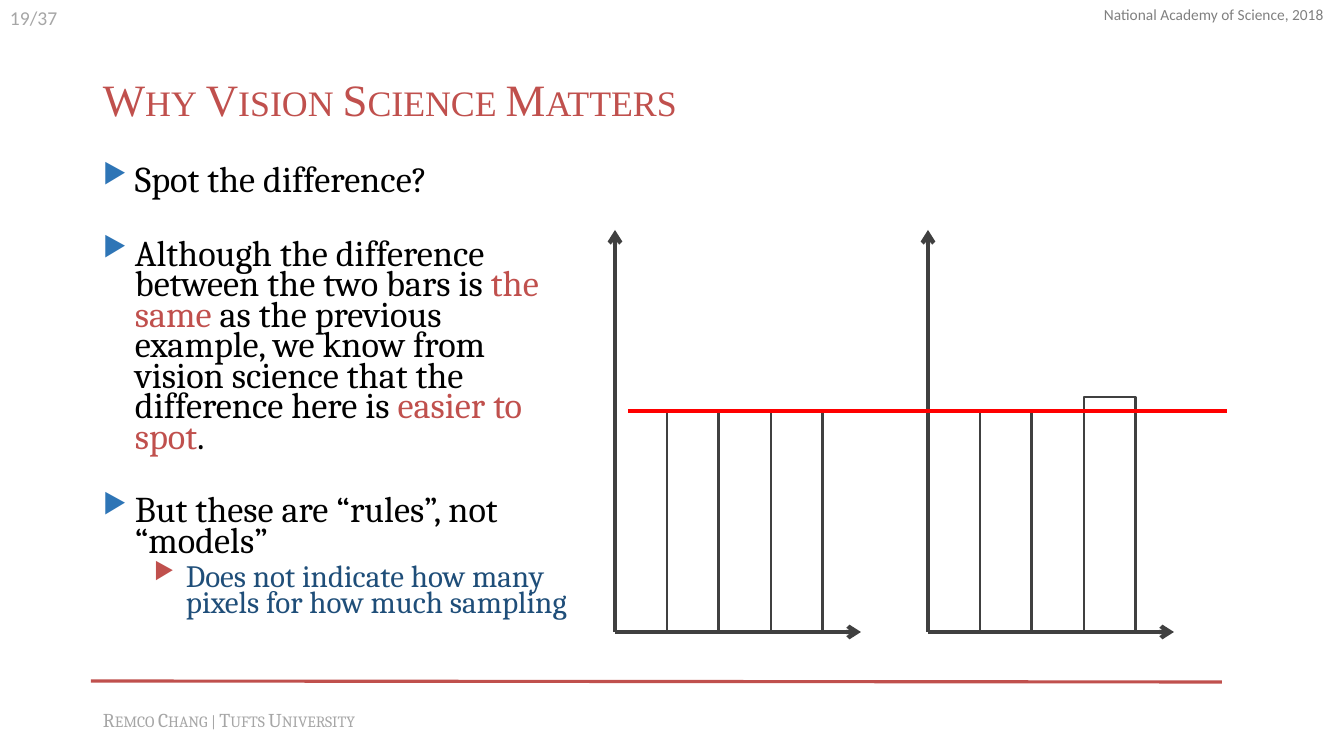
"""Build the slide on why vision science matters."""
from lxml.etree import SubElement as Sub
from pptx import Presentation
from pptx.dml.color import RGBColor as Rgb
from pptx.enum.shapes import MSO_CONNECTOR as Link, MSO_SHAPE as Kind
from pptx.enum.text import MSO_ANCHOR as Anchor
from pptx.oxml.ns import qn
from pptx.util import Pt

SCALE = 914400 / 100.8
HUES = {
    "red": "C0504D", "blue": "2E75B6", "navy": "1F4E79", "black": "000000",
    "pale": "A6A6A6", "gray": "808080", "ink": "404040", "mark": "FF0000",
}


def px(num):
    """Turn pixels into EMU."""
    return round(num * SCALE)


def hue(name):
    """Give the colour of a name."""
    return Rgb.from_string(HUES[name])


def write(para, text, size, font, color, small=False):
    """Add one run of text in its format."""
    run = para.add_run()
    run.text = text
    run.font.size = Pt(size)
    run.font.name = font
    run.font.color.rgb = hue(color)
    if small:
        run.font._element.set("cap", "small")


def bullet(para, color, left, hang):
    """Give a paragraph a hanging triangle bullet."""
    props = para._p.get_or_add_pPr()
    props.set("marL", str(px(left)))
    props.set("indent", str(-px(hang)))
    tint = Sub(props, qn("a:buClr"))
    Sub(tint, qn("a:srgbClr"), val=HUES[color])
    Sub(props, qn("a:buSzPct"), val="75000")
    Sub(props, qn("a:buChar"), char="▶")


class Page:
    """Hold the style and the current slide."""

    body, head, plain = "Cambria", "Times New Roman", "Calibri"

    def __init__(self, deck):
        """Add a blank slide."""
        self.slide = deck.slides.add_slide(deck.slide_layouts[6])

    def box(self, x, y, w, h):
        """Add an empty text frame that wraps."""
        frame = self.slide.shapes.add_textbox(px(x), px(y), px(w), px(h)).text_frame
        frame.word_wrap = True
        return frame

    def label(self, x, y, w, h, text, **form):
        """Add a single line of text."""
        frame = self.box(x, y, w, h)
        write(frame.paragraphs[0], text, **form)
        return frame

    def points(self, x, y, w, h, items):
        """Add a list of (level, space before, runs)."""
        frame = self.box(x, y, w, h)
        for num, (level, gap, runs) in enumerate(items):
            para = frame.add_paragraph() if num else frame.paragraphs[0]
            para.level = level
            para.line_spacing = 0.7
            para.space_before = Pt(gap)
            bullet(para, ("blue", "red")[level], (32, 83)[level], 32)
            for text, color in runs:
                write(para, text, size=(25.9, 22.2)[level], font=self.body, color=color)

    def line(self, x1, y1, x2, y2, color, width, arrow=False):
        """Add a straight line, with an arrowhead if asked."""
        link = self.slide.shapes.add_connector(
            Link.STRAIGHT, px(x1), px(y1), px(x2), px(y2))
        link.line.color.rgb = hue(color)
        link.line.width = Pt(width)
        if arrow:
            Sub(link.line._get_or_add_ln(), qn("a:tailEnd"), type="arrow")
        Sub(link._element.spPr, qn("a:effectLst"))

    def bar(self, x, y, w, h):
        """Add a hollow bar."""
        shape = self.slide.shapes.add_shape(Kind.RECTANGLE, px(x), px(y), px(w), px(h))
        shape.shadow.inherit = False
        shape.fill.background()
        shape.line.color.rgb = hue("ink")
        shape.line.width = Pt(2)

    def plot(self, x, base, highs):
        """Add two axes and evenly spaced bars."""
        self.line(x, base, x, base - 402, "ink", 3, arrow=True)
        self.line(x, base, x + 246, base, "ink", 3, arrow=True)
        for num, high in enumerate(highs):
            self.bar(x + 52 + 104 * num, base - high, 52, high)


def main():
    """Build and save the deck."""
    deck = Presentation()
    deck.slide_width, deck.slide_height = px(1344), px(756)
    page = Page(deck)
    page.line(91, 681, 1222, 682, "red", 2.25)
    page.label(93, 703, 354, 34, "Remco Chang | Tufts University",
               size=14, font=page.body, color="pale", small=True)
    page.label(0, 1, 280, 34, "19/37", size=14, font=page.plain, color="pale")
    page.label(1094, 0, 248, 29, "National Academy of Science, 2018",
               size=11, font=page.plain, color="gray")
    title = page.label(93, 56, 1131, 92, "Why Vision Science Matters",
                       size=32, font=page.head, color="red", small=True)
    title.vertical_anchor = Anchor.MIDDLE
    title.paragraphs[0].line_spacing = 0.9
    page.points(93, 163, 485, 510, [
        (0, 0, [("Spot the difference?", "black")]),
        (0, 31, [
            ("Although the difference between the two bars is ", "black"),
            ("the same ", "red"),
            ("as the previous example, we know from vision science "
             "that the difference here is ", "black"),
            ("easier to spot", "red"),
            (".", "black")]),
        (0, 31, [("But these are “rules”, not “models”", "black")]),
        (1, 5, [("Does not indicate how many pixels for how much sampling", "navy")]),
    ])
    for num, highs in enumerate([(220, 220), (220, 235)]):
        page.plot(615 + 313 * num, 632, highs)
    page.line(628, 411, 1227, 411, "mark", 2.25)
    deck.save("out.pptx")


if __name__ == "__main__":
    main()
